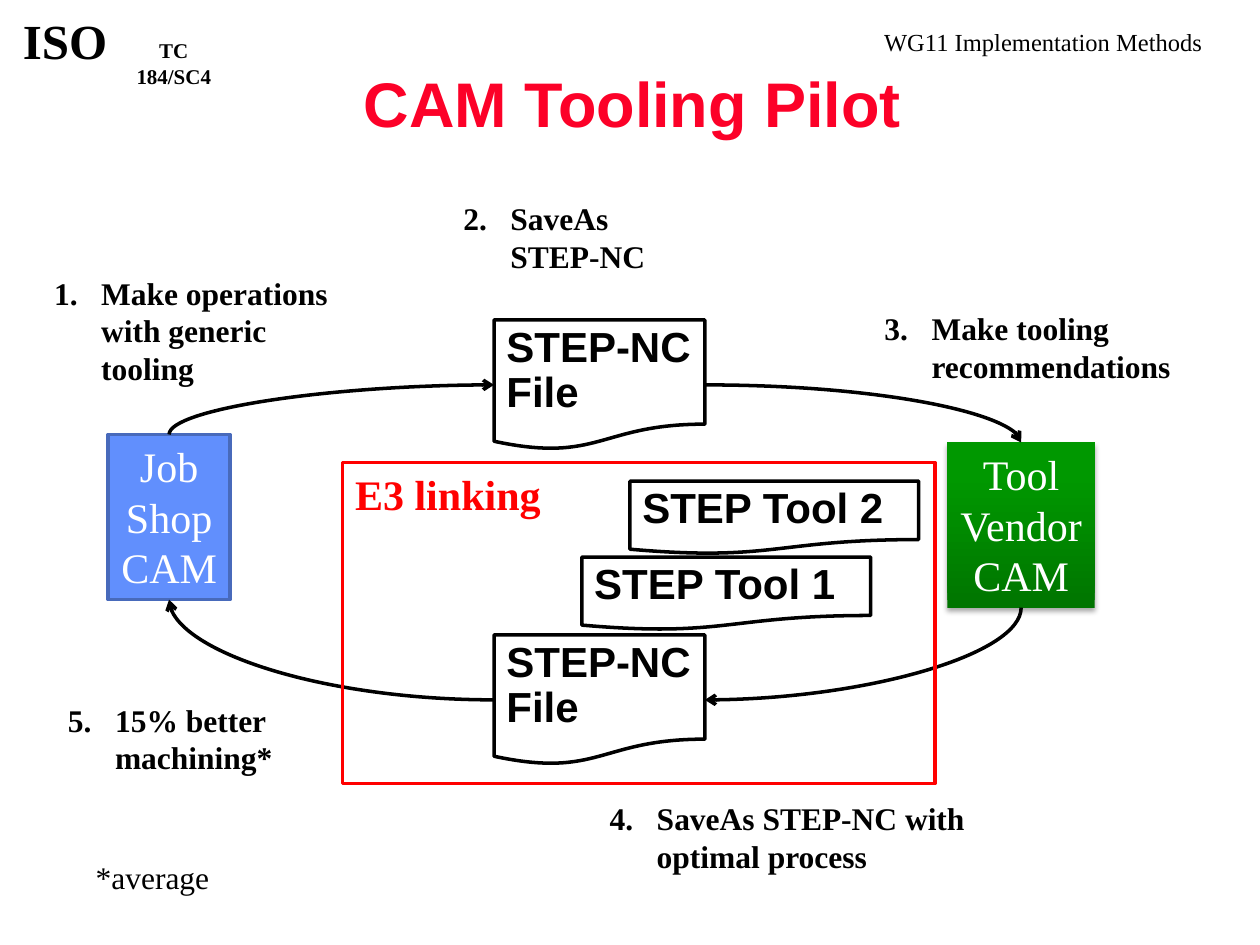
import copy

import lxml.etree
import pptx
import pptx.dml.color
import pptx.enum.shapes
import pptx.enum.text
import pptx.oxml.ns
import pptx.util

Cm = pptx.util.Cm
ALIGN = pptx.enum.text.PP_ALIGN
SHAPE = pptx.enum.shapes.MSO_SHAPE
qn = pptx.oxml.ns.qn

SERIF, SANS = "Times New Roman", "Arial"
COLORS = {
    "ink": "000000",
    "white": "FFFFFF",
    "title": "FC0128",
    "frame": "FF0000",
    "shop": "618FFD",
    "shop_line": "486ABB",
    "vendor_dark": "007500",
    "vendor_mid": "009800",
    "vendor_light": "009900",
}
TOP, LEFT, BOTTOM, RIGHT = range(4)


def color(name):
    """Return the named colour as an RGBColor."""
    return pptx.dml.color.RGBColor.from_string(COLORS[name])


def add_xml(parent, tag, **attributes):
    """Append a DrawingML element and return it."""
    return lxml.etree.SubElement(parent, qn(tag), attributes)


def write(shape, lines, size, font=SERIF, ink="ink", bold=False, align=ALIGN.LEFT,
          wrap=True, grow=True, spacing=None):
    """Fill a shape with one paragraph for each line."""
    frame = shape.text_frame
    frame.word_wrap = wrap
    frame.vertical_anchor = pptx.enum.text.MSO_ANCHOR.TOP
    if grow:
        frame.auto_size = pptx.enum.text.MSO_AUTO_SIZE.SHAPE_TO_FIT_TEXT
    for index, line in enumerate(lines):
        paragraph = frame.add_paragraph() if index else frame.paragraphs[0]
        paragraph.alignment = align
        if spacing:
            paragraph.line_spacing = spacing
        run = paragraph.add_run()
        run.text = line
        run.font.size = pptx.util.Pt(size)
        run.font.name = font
        run.font.bold = bold
        run.font.color.rgb = color(ink)


def place(box, left, top, width, height):
    """Turn centimetres relative to a box into slide lengths."""
    return Cm(box[0] + left), Cm(box[1] + top), Cm(width), Cm(height)


def add_text(slide, area, text, size, **style):
    """Add a text box holding one paragraph."""
    shape = slide.shapes.add_textbox(*area)
    write(shape, [text], size, **style)
    return shape


def add_outline(slide, kind, area, line, width):
    """Add an unfilled preset shape with a coloured outline."""
    shape = slide.shapes.add_shape(kind, *area)
    shape.shadow.inherit = False
    shape.fill.background()
    shape.line.color.rgb = color(line)
    shape.line.width = pptx.util.Pt(width)
    return shape


def add_document(slide, area, text):
    """Add a document symbol with a bold label."""
    shape = add_outline(slide, SHAPE.FLOWCHART_DOCUMENT, area, "ink", 2)
    write(shape, [text], 24, font=SANS, bold=True, spacing=0.9)
    return shape


def add_system(slide, area, lines):
    """Add a box for a CAM system with centred white lines."""
    shape = add_outline(slide, SHAPE.RECTANGLE, area, "shop_line", 2)
    write(shape, lines, 24, ink="white", align=ALIGN.CENTER, wrap=False)
    return shape


def shade_vendor(shape):
    """Give the vendor box its green gradient and soft shadow."""
    shape.line.fill.background()
    shape.fill.gradient()
    shape.fill.gradient_angle = 90
    properties = shape._element.spPr
    stops = properties.find(qn("a:gradFill")).find(qn("a:gsLst"))
    stops.append(copy.deepcopy(stops[-1]))
    names = ("vendor_dark", "vendor_mid", "vendor_light")
    for stop, position, name in zip(shape.fill.gradient_stops, (0, 0.8, 1), names):
        stop.position = position
        stop.color.rgb = color(name)
    shadow = add_xml(properties.find(qn("a:effectLst")), "a:outerShdw", blurRad="40000",
                     dist="23000", dir="5400000", rotWithShape="0")
    shade = add_xml(shadow, "a:srgbClr", val=COLORS["ink"])
    add_xml(shade, "a:alpha", val="35000")


def add_flow(slide, source, source_site, target, target_site):
    """Join two shapes with a quarter-curve arrow."""
    connector = slide.shapes.add_connector(
        pptx.enum.shapes.MSO_CONNECTOR.CURVE, 0, 0, 0, 0)
    connector.begin_connect(source, source_site)
    connector.end_connect(target, target_site)
    connector.line.color.rgb = color("ink")
    connector.line.width = pptx.util.Pt(2)
    properties = connector._element.spPr
    properties.find(qn("a:prstGeom")).set("prst", "curvedConnector2")
    add_xml(properties.find(qn("a:ln")), "a:tailEnd", type="arrow")
    add_xml(properties, "a:effectLst")
    if source_site in (TOP, BOTTOM):
        run = connector.end_x - connector.begin_x
        rise = connector.end_y - connector.begin_y
        middle_x = connector.begin_x + run // 2
        middle_y = connector.begin_y + rise // 2
        connector.begin_x = middle_x - rise // 2
        connector.end_x = middle_x + rise // 2
        connector.begin_y = middle_y + run // 2
        connector.end_y = middle_y - run // 2
        properties.find(qn("a:xfrm")).set("rot", "5400000")


def add_header(slide, box):
    """Place the committee names and the slide title."""
    add_text(slide, place(box, 16.08, 0.43, 8.41, 1.45), "WG11 Implementation Methods",
             14, align=ALIGN.RIGHT)
    add_text(slide, place(box, 0.08, 0.08, 2.46, 1.42), "ISO", 28, bold=True,
             align=ALIGN.CENTER)
    add_text(slide, place(box, 2.16, 0.64, 2.69, 0.76), "TC 184/SC4", 12, bold=True,
             align=ALIGN.CENTER)
    title = add_text(slide, place(box, 5.56, 1.6, 14.38, 0.91), "CAM Tooling Pilot", 36,
                     font=SANS, ink="title", bold=True, align=ALIGN.CENTER, grow=False)
    title.text_frame.vertical_anchor = pptx.enum.text.MSO_ANCHOR.MIDDLE


def add_cycle(slide, box):
    """Place the CAM systems, the files and the arrows between them."""
    shop = add_system(slide, place(box, 0, 2.31, 2.46, 3.33), ["Job", "Shop", "CAM"])
    shop.fill.solid()
    shop.fill.fore_color.rgb = color("shop")
    vendor = add_system(slide, place(box, 16.92, 2.47, 2.97, 3.33),
                        ["Tool", "Vendor", "CAM"])
    shade_vendor(vendor)
    request, reply = [
        add_document(slide, place(box, 7.78, top, 4.25, 2.62), "STEP-NC File")
        for top in (0, 6.35)]
    add_flow(slide, shop, TOP, request, LEFT)
    add_flow(slide, request, RIGHT, vendor, TOP)
    add_flow(slide, vendor, BOTTOM, reply, RIGHT)
    add_flow(slide, reply, LEFT, shop, BOTTOM)
    for text, left, top in (("STEP Tool 1", 9.55, 4.78), ("STEP Tool 2", 10.52, 3.25)):
        add_document(slide, place(box, left, top, 5.82, 1.47), text)
    linking = add_outline(slide, SHAPE.RECTANGLE, place(box, 4.73, 2.87, 11.94, 6.48),
                          "frame", 1.75)
    write(linking, ["E3 linking"], 24, ink="frame", bold=True, grow=False)


def add_steps(slide, box):
    """Place the numbered steps around the cycle and the footnote."""
    steps = (
        ("Make operations with generic tooling", 0, 1.5, 6.35, 2.57),
        ("SaveAs STEP-NC", 8.25, 0, 5.31, 1.8),
        ("Make tooling recommendations", 16.74, 2.21, 7.42, 1.8),
        ("SaveAs STEP-NC with optimal process", 11.2, 12.09, 7.85, 1.8),
        ("15% better machining*", 0.28, 10.11, 5.56, 1.8),
    )
    indent = Cm(0.95)
    for number, (text, *area) in enumerate(steps, 1):
        shape = add_text(slide, place(box, *area), text, 18, bold=True)
        properties = shape.text_frame.paragraphs[0]._p.get_or_add_pPr()
        properties.set("marL", str(indent))
        properties.set("indent", str(-indent))
        add_xml(properties, "a:buAutoNum", type="arabicPeriod", startAt=str(number))
    add_text(slide, place(box, 0.84, 13.28, 3, 1.02), "*average", 18, wrap=False)


def main():
    """Build and save the slide."""
    presentation = pptx.Presentation()
    presentation.slide_width, presentation.slide_height = Cm(25.4), Cm(19.05)
    slide = presentation.slides.add_slide(presentation.slide_layouts[6])
    add_header(slide, (0, 0))
    add_cycle(slide, (2.18, 6.45))
    add_steps(slide, (0.84, 3.89))
    presentation.save("out.pptx")


if __name__ == "__main__":
    main()
